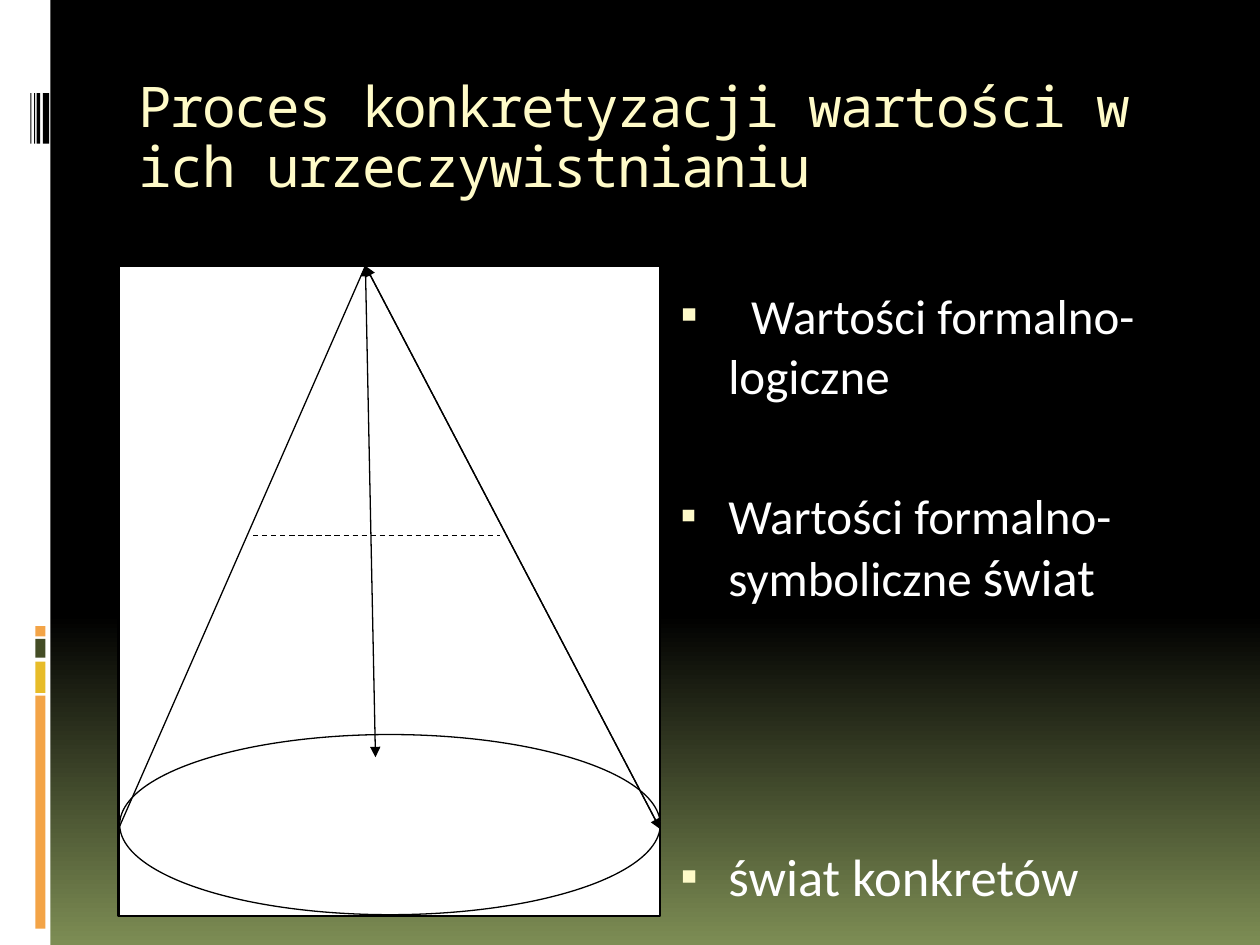
from lxml.etree import SubElement
from pptx import Presentation
from pptx.dml.color import RGBColor
from pptx.enum.dml import MSO_LINE
from pptx.enum.shapes import MSO_CONNECTOR, MSO_SHAPE
from pptx.enum.text import MSO_ANCHOR, MSO_AUTO_SIZE, PP_ALIGN
from pptx.oxml.ns import qn
from pptx.util import Inches, Pt

COLORS = {
    "black": "000000",
    "white": "FFFFFF",
    "moss": "7D8D54",
    "orange": "F3A447",
    "gold": "E7BC29",
    "olive": "444D26",
    "cream": "FFFBC8",
    "bullet": "FEFAC9",
}


def color(name):
    return RGBColor.from_string(COLORS[name])


class Deck:
    head_font = "Noto Sans Mono"
    text_font = "Calibri"

    def __init__(self):
        self.prs = Presentation()
        self.prs.slide_width = Inches(10)
        self.prs.slide_height = Inches(7.5)
        self.slide = self.prs.slides.add_slide(self.prs.slide_layouts[1])
        self.shapes = self.slide.shapes

    def backdrop(self, top, start, bottom):
        fill = self.slide.background.fill
        fill.gradient()
        fill.gradient_angle = 270
        stops = zip(fill.gradient_stops, (start, 1), (top, bottom))
        for stop, place, name in stops:
            stop.position = place
            stop.color.rgb = color(name)

    def group(self):
        self.shapes = self.slide.shapes.add_group_shape().shapes

    def shape(self, kind, box, fill, width=0):
        item = self.shapes.add_shape(kind, *map(Inches, box))
        item.shadow.inherit = False
        item.fill.solid()
        item.fill.fore_color.rgb = color(fill)
        if width:
            item.line.color.rgb = color("black")
            item.line.width = Pt(width)
        else:
            item.line.fill.background()

    def line(self, start, end, dash=False, arrows=False):
        item = self.shapes.add_connector(
            MSO_CONNECTOR.STRAIGHT, *map(Inches, start + end))
        item.line.color.rgb = color("black")
        item.line.width = Pt(0.75)
        if dash:
            item.line.dash_style = MSO_LINE.DASH
        if arrows:
            for tag in ("a:headEnd", "a:tailEnd"):
                SubElement(item.line._ln, qn(tag), type="triangle")
        SubElement(item._element.spPr, qn("a:effectLst"))

    def place(self, holder, box):
        holder.left, holder.top, holder.width, holder.height = map(Inches, box)
        frame = holder.text_frame
        frame.word_wrap = True
        frame.auto_size = MSO_AUTO_SIZE.NONE
        frame.vertical_anchor = MSO_ANCHOR.TOP
        return frame

    def title(self, text, box):
        frame = self.place(self.slide.shapes.title, box)
        frame.margin_top = Inches(0.08)
        para = frame.paragraphs[0]
        para.alignment = PP_ALIGN.LEFT
        para.line_spacing = 0.88
        run = para.add_run()
        run.text = text
        run._r.get_or_add_rPr().set("spc", "-100")
        para.font.name = self.head_font
        para.font.size = Pt(32)
        para.font.color.rgb = color("cream")

    def bullet(self, para):
        props = para._p.get_or_add_pPr()
        props.set("marL", str(Inches(0.45)))
        props.set("indent", str(Inches(-0.38)))
        tint = SubElement(props, qn("a:buClr"))
        SubElement(tint, qn("a:srgbClr"), val=COLORS["bullet"])
        SubElement(props, qn("a:buSzPct"), val="95000")
        SubElement(props, qn("a:buChar"), char="▪")

    def items(self, rows, box):
        frame = self.place(self.slide.placeholders[1], box)
        for index, (gap, runs) in enumerate(rows):
            para = frame.add_paragraph() if index else frame.paragraphs[0]
            para.space_before = Pt(gap)
            self.bullet(para)
            para.font.name = self.text_font
            para.font.color.rgb = color("white")
            for text, size in runs:
                run = para.add_run()
                run.text = text
                run.font.size = Pt(size)


def main():
    deck = Deck()
    deck.backdrop("black", 0.65, "moss")

    deck.shape(MSO_SHAPE.RECTANGLE, (0, 0, 0.4, 7.5), "white")
    blocks = [(5.52, 1.85, "orange"), (5.25, 0.25, "gold"),
              (5.07, 0.15, "olive"), (4.97, 0.08, "orange")]
    for top, height, fill in blocks:
        deck.shape(MSO_SHAPE.RECTANGLE, (0.28, top, 0.08, height), fill)
    for left, width in [(0.34, 0.05), (0.29, 0.03), (0.27, 0.01), (0.24, 0.01)]:
        deck.shape(MSO_SHAPE.RECTANGLE, (left, 0.74, width, 0.4), "black")

    deck.title("Proces konkretyzacji wartości w ich urzeczywistnianiu",
               (1, 0.56, 8.5, 0.61))
    deck.items([
        (7, [(" ", 30), (" Wartości formalno-logiczne", 28)]),
        (46.5, [("Wartości formalno-symboliczne ", 28), ("świat", 30)]),
        (135, [("świat konkretów", 30)]),
    ], (5.23, 2.19, 4.27, 5.31))

    deck.group()
    deck.shape(MSO_SHAPE.RECTANGLE, (0.94, 2.11, 4.3, 5.16), "white", 1.5)
    deck.shape(MSO_SHAPE.OVAL, (0.95, 5.83, 4.29, 1.43), "white", 0.75)
    apex, left, right = (2.9, 2.11), (0.94, 6.58), (5.24, 6.58)
    deck.line(left, apex)
    deck.line(right, apex)
    deck.line((2.01, 4.25), (3.97, 4.25), dash=True)
    deck.line(apex, right, arrows=True)
    deck.line(apex, (2.98, 6.01), arrows=True)

    deck.prs.save("out.pptx")


if __name__ == "__main__":
    main()
